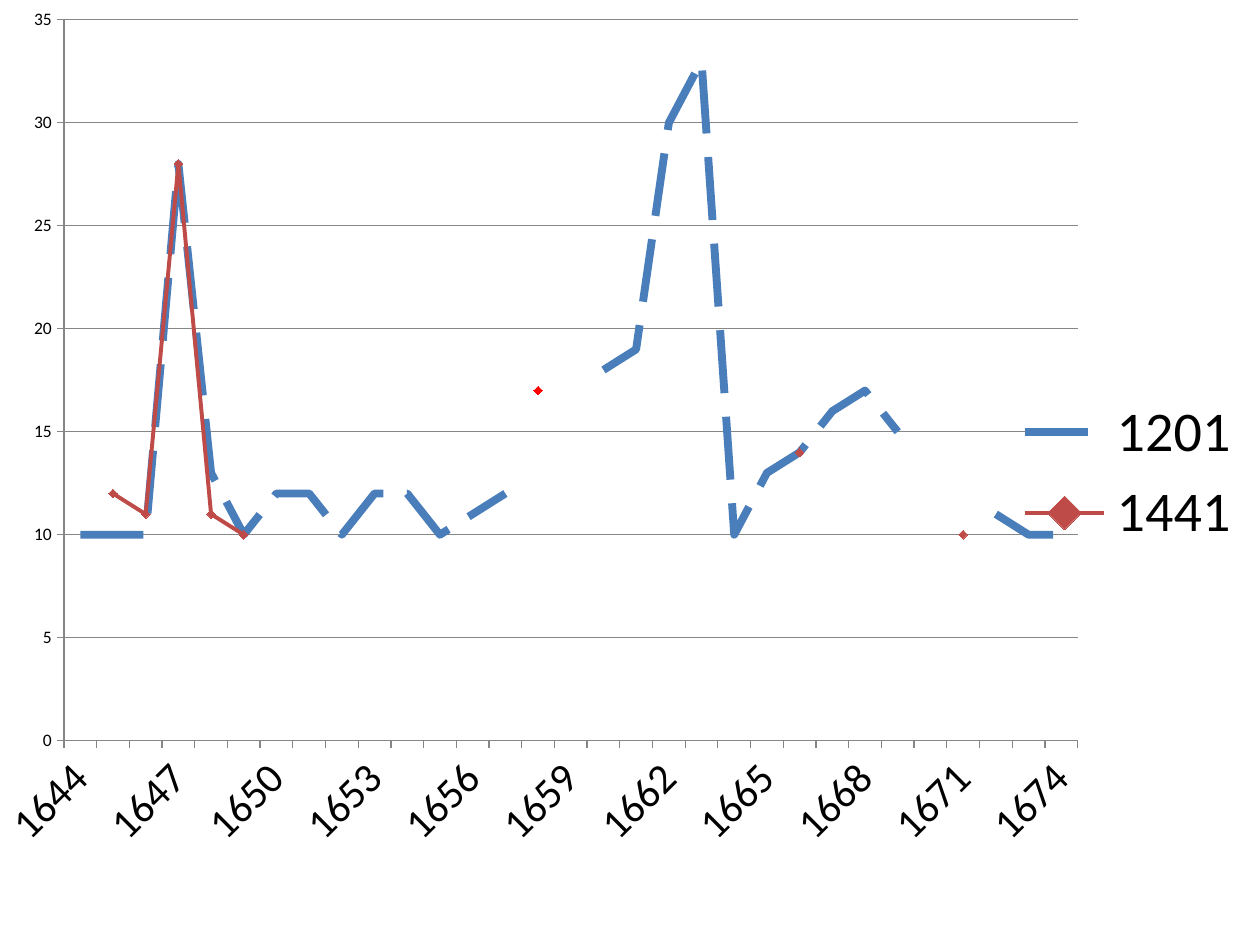
from lxml.etree import SubElement
from pptx import Presentation
from pptx.chart.data import CategoryChartData
from pptx.dml.color import RGBColor
from pptx.enum.chart import (XL_CHART_TYPE, XL_LEGEND_POSITION,
                             XL_MARKER_STYLE, XL_TICK_MARK)
from pptx.enum.dml import MSO_LINE
from pptx.oxml.ns import qn
from pptx.util import Inches, Pt

THEME = {
    "font": "Calibri",
    "text": RGBColor(0, 0, 0),
    "grid": RGBColor(0x86, 0x86, 0x86),
    "blue": RGBColor(0x4A, 0x7E, 0xBB),
    "brick": RGBColor(0xBE, 0x4B, 0x48),
    "red": RGBColor(0xFF, 0, 0),
    "base": Pt(10),
    "years": Pt(24),
    "legend": Pt(32),
}
START, END = 1644, 1674
LOT_1201 = [10, 10, 10, 28, 13, 10, 12, 12, 10, 12, 12, 10, 11, 12,
            None, None, 18, 19, 30, 33, 10, 13, 14, 16, 17, 15,
            None, None, 11, 10, 10]
LOT_1441 = {1645: 12, 1646: 11, 1647: 28, 1648: 11, 1649: 10,
            1658: 17, 1666: 14, 1671: 10}


deck = Presentation()
deck.slide_width, deck.slide_height = Inches(10), Inches(7.5)
slide = deck.slides.add_slide(deck.slide_layouts[6])

years = range(START, END + 1)
data = CategoryChartData()
data.categories = [str(year) for year in years]
data.add_series("1201", LOT_1201)
data.add_series("1441", [LOT_1441.get(year) for year in years])
chart = slide.shapes.add_chart(
    XL_CHART_TYPE.LINE_MARKERS, Inches(-0.12), Inches(0),
    Inches(10.12), Inches(7.5), data).chart
chart.has_title = False
chart.font.name = THEME["font"]
chart.font.size = THEME["base"]
chart.font.color.rgb = THEME["text"]

# Series
plot = chart.plots[0]
plot.vary_by_categories = False
first, second = plot.series
lone = second.points[1658 - START]
for line, color, width in ((first, "blue", 4.5), (second, "brick", 2.25),
                           (lone, "red", 2.25)):
    line.format.line.color.rgb = THEME[color]
    line.format.line.width = Pt(width)
first.smooth = second.smooth = False
first.format.line.dash_style = MSO_LINE.LONG_DASH
first.marker.style = XL_MARKER_STYLE.NONE
for marker, color in ((second.marker, "brick"), (lone.marker, "red")):
    marker.style = XL_MARKER_STYLE.DIAMOND
    marker.size = 5
    marker.format.fill.solid()
    marker.format.fill.fore_color.rgb = THEME[color]
    marker.format.line.color.rgb = THEME[color]

# Axes
value, category = chart.value_axis, chart.category_axis
value.minimum_scale, value.maximum_scale, value.major_unit = 0, 35, 5
value.has_major_gridlines = True
for part in (value, category, value.major_gridlines):
    part.format.line.color.rgb = THEME["grid"]
for axis in (value, category):
    axis.major_tick_mark = XL_TICK_MARK.OUTSIDE
    axis.minor_tick_mark = XL_TICK_MARK.NONE
category.tick_labels.font.size = THEME["years"]
node = category._element
node.find(qn("c:txPr")).find(qn("a:bodyPr")).set("rot", "-2700000")
skip = SubElement(node, qn("c:tickLblSkip"))
skip.set("val", "3")
node.find(qn("c:noMultiLvlLbl")).addprevious(skip)

# Legend
chart.has_legend = True
chart.legend.position = XL_LEGEND_POSITION.RIGHT
chart.legend.include_in_layout = False
chart.legend.font.size = THEME["legend"]

# Plot area, as fractions of the chart
area = chart._chartSpace.chart.plotArea
layout = area.find(qn("c:layout"))
if layout is None:
    layout = SubElement(area, qn("c:layout"))
    area.insert(0, layout)
manual = SubElement(layout, qn("c:manualLayout"))
for tag, val in (("layoutTarget", "inner"), ("xMode", "edge"), ("yMode", "edge"),
                 ("x", "0.062"), ("y", "0.021"), ("w", "0.795"), ("h", "0.763")):
    SubElement(manual, qn("c:" + tag)).set("val", val)

deck.save("out.pptx")
